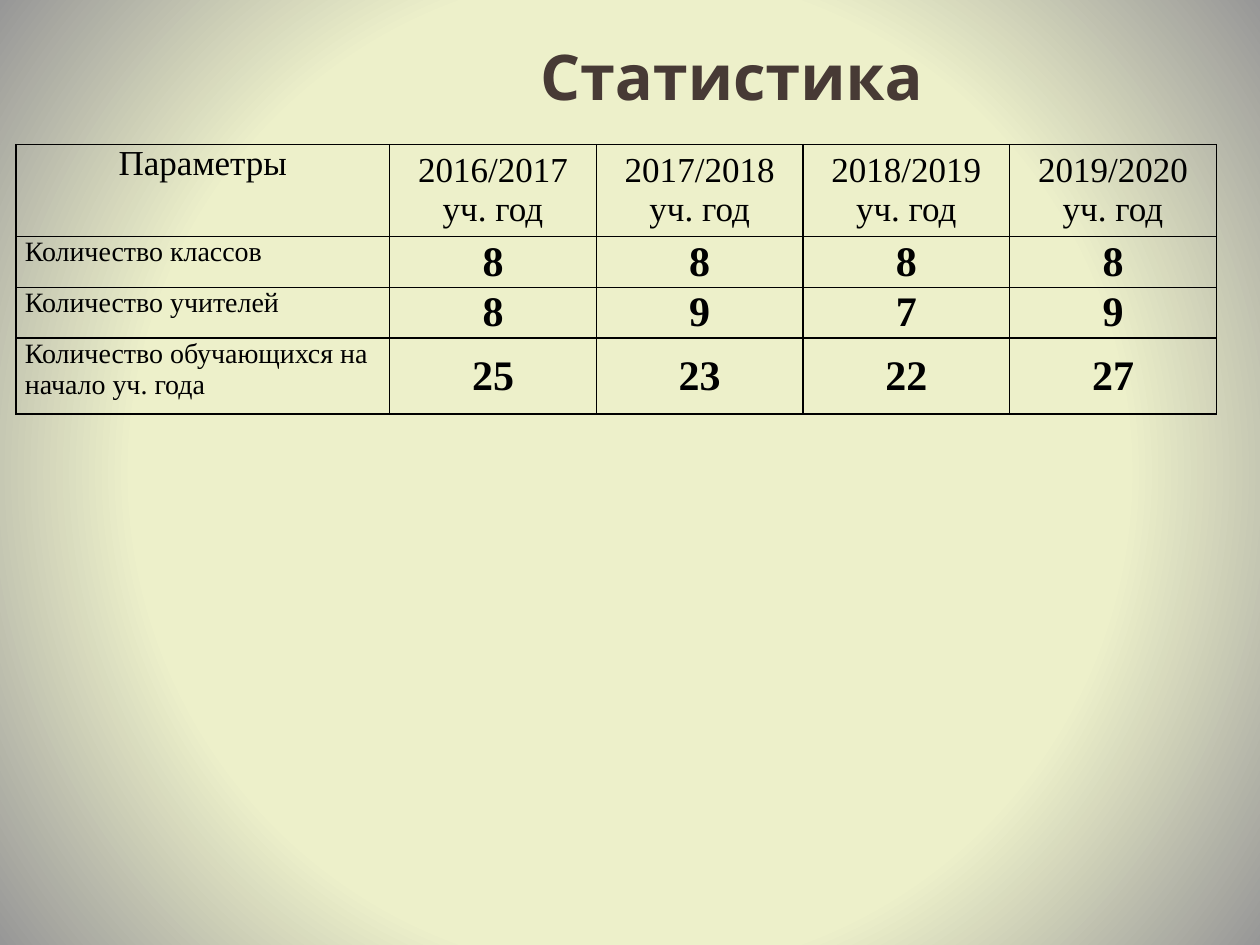
from typing import NamedTuple

from lxml import etree
from pptx import Presentation
from pptx.dml.color import RGBColor
from pptx.enum.text import MSO_ANCHOR, PP_ALIGN
from pptx.oxml import parse_xml
from pptx.oxml.ns import qn
from pptx.util import Pt

CENTER, LEFT = PP_ALIGN.CENTER, PP_ALIGN.LEFT
TOP, MIDDLE = MSO_ANCHOR.TOP, MSO_ANCHOR.MIDDLE
DRAWING_NS = "http://schemas.openxmlformats.org/drawingml/2006/main"
TITLE_ONLY = 5
COLORS = {
    "background": "EDF0CA",
    "edge": "979797",
    "title_dark": "473A35",
    "title_light": "6A5650",
    "text": "000000",
    "border": "000000",
}


class CellStyle(NamedTuple):
    size: int
    bold: bool
    align: PP_ALIGN
    anchor: MSO_ANCHOR


CORNER = CellStyle(20, False, CENTER, TOP)
YEAR = CellStyle(20, False, CENTER, MIDDLE)
LABEL = CellStyle(16, False, LEFT, TOP)
VALUE = CellStyle(24, True, CENTER, MIDDLE)

ROWS = [
    ("Параметры", "2016/2017 уч. год", "2017/2018 уч. год", "2018/2019 уч. год", "2019/2020 уч. год"),
    ("Количество классов", "8", "8", "8", "8"),
    ("Количество учителей", "8", "9", "7", "9"),
    ("Количество обучающихся на начало уч. года", "25", "23", "22", "27"),
]
COLUMN_WIDTHS = [213.5] + [118.1] * 4
ROW_HEIGHTS = [52.5, 29.1, 29.1, 43.2]


def set_gradient(fill, stops: list[tuple[float, str]]) -> None:
    fill.gradient()
    for stop, (position, color) in zip(fill.gradient_stops, stops):
        stop.position = position
        stop.color.rgb = RGBColor.from_string(COLORS[color])


def paint_background(slide) -> None:
    """Fill the background with a gradient that spreads in circles from the centre."""
    set_gradient(slide.background.fill, [(0.63, "background"), (1, "edge")])
    gradient = slide.element.find(".//" + qn("a:gradFill"))
    gradient.replace(gradient.find(qn("a:lin")), parse_xml(
        f'<a:path xmlns:a="{DRAWING_NS}" path="circle">'
        '<a:fillToRect l="50000" t="50000" r="50000" b="50000"/></a:path>'))


def add_title(slide, text: str) -> None:
    title = slide.shapes.title
    title.left, title.top, title.width, title.height = Pt(150.5), Pt(9.4), Pt(535), Pt(67)
    title.text_frame.vertical_anchor = MIDDLE
    paragraph = title.text_frame.paragraphs[0]
    paragraph.alignment = CENTER
    run = paragraph.add_run()
    run.text = text
    run.font.name, run.font.size, run.font.bold = "Comic Neue", Pt(36), True
    set_gradient(run.font.fill, [(0, "title_dark"), (0.86, "title_light")])
    run.font.fill.gradient_angle = 315


def add_borders(cell) -> None:
    properties = cell._tc.get_or_add_tcPr()
    for index, side in enumerate(("lnL", "lnR", "lnT", "lnB")):
        line = etree.Element(qn(f"a:{side}"), w=str(Pt(1)))
        fill = etree.SubElement(line, qn("a:solidFill"))
        etree.SubElement(fill, qn("a:srgbClr"), val=COLORS["border"])
        properties.insert(index, line)


def fill_cell(cell, text: str, style: CellStyle) -> None:
    cell.fill.background()
    add_borders(cell)
    cell.margin_left = cell.margin_right = Pt(5)
    cell.margin_top = cell.margin_bottom = Pt(0)
    cell.vertical_anchor = style.anchor
    cell.text = text
    paragraph = cell.text_frame.paragraphs[0]
    paragraph.alignment = style.align
    font = paragraph.font
    font.name, font.size, font.bold = "Times New Roman", Pt(style.size), style.bold
    font.color.rgb = RGBColor.from_string(COLORS["text"])


def add_statistics(slide) -> None:
    table = slide.shapes.add_table(
        len(ROWS), len(COLUMN_WIDTHS), Pt(9.2), Pt(82.6),
        Pt(sum(COLUMN_WIDTHS)), Pt(sum(ROW_HEIGHTS))).table
    table.first_row = table.horz_banding = False
    for column, width in zip(table.columns, COLUMN_WIDTHS):
        column.width = Pt(width)
    for row, height in zip(table.rows, ROW_HEIGHTS):
        row.height = Pt(height)
    for row_index, texts in enumerate(ROWS):
        first, rest = (LABEL, VALUE) if row_index else (CORNER, YEAR)
        for column_index, text in enumerate(texts):
            style = rest if column_index else first
            fill_cell(table.cell(row_index, column_index), text, style)
    # The first line of the first year hangs to the left.
    first_year = table.cell(0, 1).text_frame.paragraphs[0]
    first_year._p.get_or_add_pPr().set("indent", str(Pt(-15)))


def main() -> None:
    presentation = Presentation()
    presentation.slide_width, presentation.slide_height = Pt(720), Pt(540)
    slide = presentation.slides.add_slide(presentation.slide_layouts[TITLE_ONLY])
    paint_background(slide)
    add_title(slide, "Статистика")
    add_statistics(slide)
    presentation.save("out.pptx")


if __name__ == "__main__":
    main()
